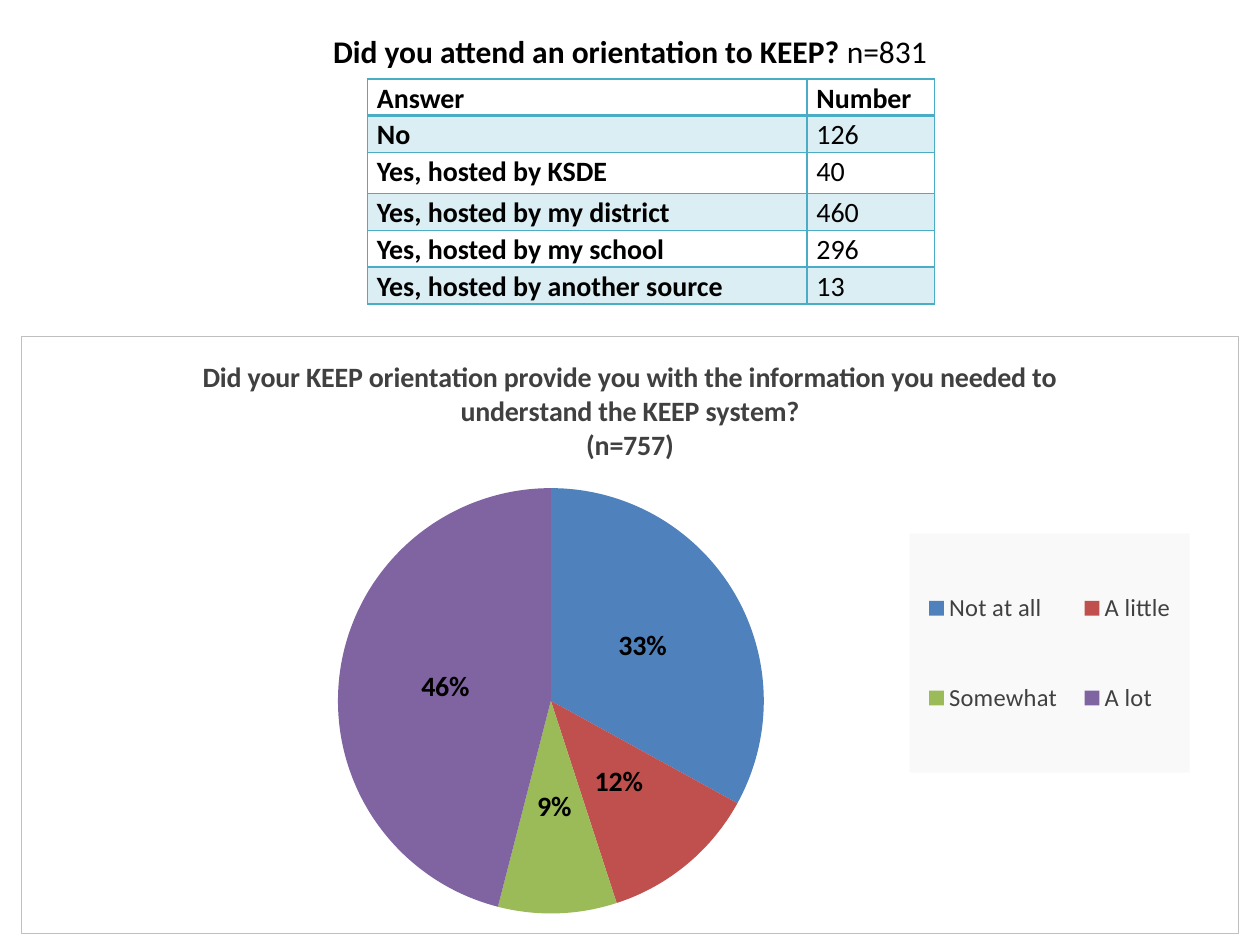
from dataclasses import dataclass
from typing import Any

from pptx import Presentation
from pptx.chart.data import CategoryChartData
from pptx.dml.color import RGBColor
from pptx.enum.chart import XL_CHART_TYPE as ChartType
from pptx.enum.chart import XL_LABEL_POSITION as LabelPosition
from pptx.enum.chart import XL_LEGEND_POSITION as LegendPosition
from pptx.enum.text import MSO_ANCHOR as Anchor
from pptx.enum.text import PP_ALIGN as Align
from pptx.oxml import parse_xml
from pptx.oxml.ns import nsdecls, qn
from pptx.util import Pt

FONT = "Calibri"
BLACK, GREY, TEAL = "000000", "404040", "4BACC6"


@dataclass(frozen=True)
class Answer:
    label: str
    number: str
    height: float = 21


@dataclass(frozen=True)
class Slice:
    label: str
    percent: int
    color: str


@dataclass(frozen=True)
class Box:
    x: float
    y: float
    w: float
    h: float


ANSWERS = [
    Answer("Answer", "Number"),
    Answer("No", "126"),
    Answer("Yes, hosted by KSDE", "40", 23.5),
    Answer("Yes, hosted by my district", "460"),
    Answer("Yes, hosted by my school", "296"),
    Answer("Yes, hosted by another source", "13"),
]
SLICES = [
    Slice("Not at all", 33, "4F81BD"),
    Slice("A little", 12, "C0504D"),
    Slice("Somewhat", 9, "9BBB59"),
    Slice("A lot", 46, "8064A2"),
]
CHART_TITLE = [
    "Did your KEEP orientation provide you with the information "
    "you needed to understand the KEEP system?",
    "(n=757)",
]


def color(value: str) -> RGBColor:
    return RGBColor.from_string(value)


def style_font(font: Any, size: float, value: str, bold: bool = False) -> None:
    font.name, font.size, font.bold = FONT, Pt(size), bold
    font.color.rgb = color(value)


def add_run(paragraph: Any, text: str, size: float, value: str, bold: bool) -> None:
    run = paragraph.add_run()
    run.text = text
    style_font(run.font, size, value, bold)


def place(box: Box) -> tuple:
    return Pt(box.x), Pt(box.y), Pt(box.w), Pt(box.h)


def add_heading(slide: Any, box: Box) -> None:
    frame = slide.shapes.add_textbox(*place(box)).text_frame
    frame.word_wrap = True
    frame.vertical_anchor = Anchor.MIDDLE
    paragraph = frame.paragraphs[0]
    paragraph.alignment = Align.CENTER
    add_run(paragraph, "Did you attend an orientation to KEEP? ", 18, BLACK, True)
    add_run(paragraph, "n=831", 18, BLACK, False)


def style_cell(cell: Any, row: int) -> None:
    properties = cell._tc.get_or_add_tcPr()
    widths = {"L": 1, "R": 1, "T": 2 if row == 1 else 1, "B": 2 if row == 0 else 1}
    for side, width in widths.items():
        properties.append(parse_xml(
            f'<a:ln{side} {nsdecls("a")} w="{Pt(width)}"><a:solidFill>'
            f'<a:srgbClr val="{TEAL}"/></a:solidFill></a:ln{side}>'))
    if row % 2:
        cell.fill.solid()
        cell.fill.fore_color.rgb = color(TEAL)
        tint = properties.find(qn("a:solidFill")).find(qn("a:srgbClr"))
        tint.append(parse_xml(f'<a:alpha {nsdecls("a")} val="20000"/>'))
    else:
        cell.fill.background()
    cell.margin_left = cell.margin_right = Pt(5.4)
    cell.margin_top = cell.margin_bottom = Pt(0)


def add_answer_table(slide: Any, box: Box) -> None:
    table = slide.shapes.add_table(len(ANSWERS), 2, *place(box)).table
    table.first_row = table.horz_banding = False
    for column, width in zip(table.columns, (251.2, 72.8)):
        column.width = Pt(width)
    for row, answer in enumerate(ANSWERS):
        table.rows[row].height = Pt(answer.height)
        for column, text in enumerate((answer.label, answer.number)):
            cell = table.cell(row, column)
            style_cell(cell, row)
            paragraph = cell.text_frame.paragraphs[0]
            paragraph.line_spacing = 1.07
            add_run(paragraph, text, 16, BLACK, row == 0 or column == 0)


def set_layout(parent: Any, index: int, box: Box, target: str = "") -> None:
    for old in parent.findall(qn("c:layout")):
        parent.remove(old)
    parent.insert(index, parse_xml(
        f'<c:layout {nsdecls("c")}><c:manualLayout>{target}'
        '<c:xMode val="edge"/><c:yMode val="edge"/>'
        f'<c:x val="{box.x}"/><c:y val="{box.y}"/>'
        f'<c:w val="{box.w}"/><c:h val="{box.h}"/>'
        '</c:manualLayout></c:layout>'))


def add_shape_format(parent: Any, content: str) -> None:
    parent.find(qn("c:txPr")).addprevious(parse_xml(
        f'<c:spPr {nsdecls("c", "a")}>{content}</c:spPr>'))


def add_pie(slide: Any, box: Box) -> None:
    data = CategoryChartData()
    data.categories = [part.label for part in SLICES]
    data.add_series("Series 1", [part.percent for part in SLICES])
    chart = slide.shapes.add_chart(ChartType.PIE, *place(box), data).chart
    style_font(chart.font, 10, BLACK)
    add_shape_format(chart._chartSpace, (
        f'<a:noFill/><a:ln w="{Pt(0.75)}"><a:solidFill>'
        '<a:srgbClr val="BFBFBF"/></a:solidFill></a:ln>'))

    chart.has_title = True
    frame = chart.chart_title.text_frame
    for index, line in enumerate(CHART_TITLE):
        paragraph = frame.add_paragraph() if index else frame.paragraphs[0]
        add_run(paragraph, line, 16, GREY, True)
    chart.chart_title.include_in_layout = False

    plot = chart.plots[0]
    plot.vary_by_categories = True
    for index, part in enumerate(SLICES):
        fill = plot.series[0].points[index].format.fill
        fill.solid()
        fill.fore_color.rgb = color(part.color)
    labels = plot.series[0].data_labels
    labels.show_percentage, labels.show_value = True, False
    labels.number_format, labels.number_format_is_linked = "0%", False
    labels.position = LabelPosition.CENTER
    style_font(labels.font, 16, BLACK, True)
    set_layout(chart._chartSpace.chart.plotArea, 0, Box(0.26, 0.25, 0.35, 0.72),
               '<c:layoutTarget val="inner"/>')

    chart.has_legend = True
    legend = chart.legend
    legend.position = LegendPosition.RIGHT
    legend.include_in_layout = False
    style_font(legend.font, 14, GREY)
    set_layout(legend._element, 1, Box(0.73, 0.33, 0.23, 0.4))
    add_shape_format(legend._element,
                     '<a:solidFill><a:srgbClr val="F9F9F9"/></a:solidFill>')


def main() -> None:
    presentation = Presentation()
    presentation.slide_width, presentation.slide_height = Pt(720), Pt(540)
    slide = presentation.slides.add_slide(presentation.slide_layouts[6])
    add_answer_table(slide, Box(210, 45.2, 324, 128.5))
    add_heading(slide, Box(0, 14.6, 720, 29))
    add_pie(slide, Box(12, 192, 696, 342))
    presentation.save("out.pptx")


if __name__ == "__main__":
    main()
